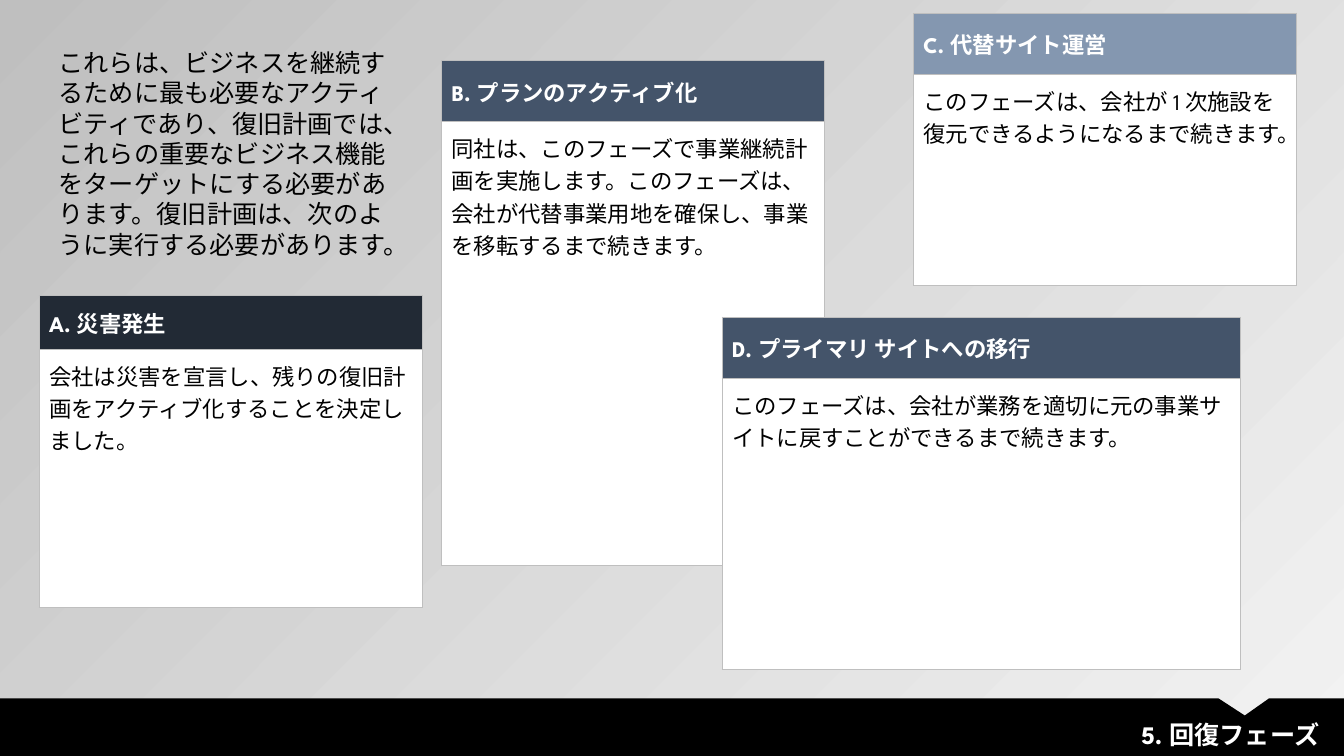
import pptx
import pptx.dml.color
import pptx.enum.lang
import pptx.enum.text
import pptx.oxml
import pptx.oxml.ns
import pptx.util
from pptx.util import Cm

COLORS = {
    "black": "000000", "white": "FFFFFF", "border": "BFBFBF", "light": "F2F2F2",
    "navy": "222A35", "slate": "44546A", "steel": "8497B0",
}
FONT = "League Spartan"
ANCHOR = pptx.enum.text.MSO_ANCHOR
ALIGN = pptx.enum.text.PP_ALIGN


def rgb(name):
    return pptx.dml.color.RGBColor.from_string(COLORS[name])


def write(tf, text, size=16, color="black", bold=False, align=ALIGN.LEFT,
          anchor=ANCHOR.TOP, east_asian=False):
    tf.word_wrap = True
    tf.vertical_anchor = anchor
    p = tf.paragraphs[0]
    p.alignment = align
    p.line_spacing = 1.0
    p.space_before = pptx.util.Pt(0)
    r = p.add_run()
    r.text = text
    r.font.name = FONT
    r.font.size = pptx.util.Pt(size)
    r.font.bold = bold
    r.font.color.rgb = rgb(color)
    r.font.language_id = pptx.enum.lang.MSO_LANGUAGE_ID.JAPANESE
    if east_asian:
        ea = pptx.oxml.parse_xml(f'<a:ea {pptx.oxml.ns.nsdecls("a")} typeface="{FONT}"/>')
        r.font._element.append(ea)


prs = pptx.Presentation()
prs.slide_width, prs.slide_height = Cm(33.87), Cm(19.05)
s = prs.slides.add_slide(prs.slide_layouts[1])

# Background gradient, light at the lower right
fill = s.background.fill
fill.gradient()
fill.gradient_angle = 135
for stop, position, color in zip(fill.gradient_stops, (0, 1), ("light", "border")):
    stop.position = position
    stop.color.rgb = rgb(color)

# Black footer band with a notch, behind everything else
band = [(30.71, 17.6), (31.37, 18.03), (31.98, 17.6), (33.87, 17.6), (33.87, 19.05), (0, 19.05)]
builder = s.shapes.build_freeform(Cm(0), Cm(17.6))
builder.add_line_segments([(Cm(x), Cm(y)) for x, y in band], close=True)
sp = builder.convert_to_shape()
sp.shadow.inherit = False
sp.fill.solid()
sp.fill.fore_color.rgb = rgb("black")
sp.line.fill.background()
s.shapes._spTree.insert(2, sp._element)

# Title in the footer
title = s.shapes.title
title.left, title.top, title.width, title.height = Cm(0.61), Cm(17.99), Cm(32.89), Cm(1.8)
write(title.text_frame, "5. 回復フェーズ", size=18, color="white", bold=True,
      align=ALIGN.RIGHT, east_asian=True)

# Introduction
intro = s.placeholders[1]
intro.left, intro.top, intro.width, intro.height = Cm(1.22), Cm(1.07), Cm(9.22), Cm(5.64)
write(intro.text_frame,
      "これらは、ビジネスを継続するために最も必要なアクティビティであり、復旧計画では、"
      "これらの重要なビジネス機能をターゲットにする必要があります。"
      "復旧計画は、次のように実行する必要があります。", size=18, east_asian=True)
pPr = intro.text_frame.paragraphs[0]._p.get_or_add_pPr()
pPr.set("marL", "0")
pPr.set("indent", "0")
pPr.append(pptx.oxml.parse_xml(f'<a:buNone {pptx.oxml.ns.nsdecls("a")}/>'))

# Phase cards: left, top, width, row heights, header colour, heading, body
cards = [
    (23.02, 0.33, 9.65, (1.54, 5.33), "steel", "C. 代替サイト運営",
     "このフェーズは、会社が 1 次施設を復元できるようになるまで続きます。"),
    (11.13, 1.53, 9.65, (1.54, 11.18), "slate", "B. プランのアクティブ化",
     "同社は、このフェーズで事業継続計画を実施します。このフェーズは、"
     "会社が代替事業用地を確保し、事業を移転するまで続きます。"),
    (18.2, 8, 13.06, (1.54, 7.33), "slate", "D. プライマリ サイトへの移行",
     "このフェーズは、会社が業務を適切に元の事業サイトに戻すことができるまで続きます。"),
    (0.99, 7.45, 9.65, (1.35, 6.5), "navy", "A. 災害発生",
     "会社は災害を宣言し、残りの復旧計画をアクティブ化することを決定しました。"),
]
for left, top, width, heights, header, heading, body in cards:
    table = s.shapes.add_table(2, 1, Cm(left), Cm(top), Cm(width), Cm(sum(heights))).table
    rows = [(heading, header, "white", True, ANCHOR.MIDDLE),
            (body, "white", "black", False, ANCHOR.TOP)]
    for i, (text, back, color, bold, anchor) in enumerate(rows):
        table.rows[i].height = Cm(heights[i])
        cell = table.cell(i, 0)
        cell.margin_left = cell.margin_right = Cm(0.25)
        cell.margin_top = cell.margin_bottom = Cm(0.25)
        cell.vertical_anchor = anchor
        for side in "LRTB":
            cell._tc.get_or_add_tcPr().append(pptx.oxml.parse_xml(
                f'<a:ln{side} {pptx.oxml.ns.nsdecls("a")} w="12700"><a:solidFill>'
                f'<a:srgbClr val="{COLORS["border"]}"/></a:solidFill></a:ln{side}>'))
        cell.fill.solid()
        cell.fill.fore_color.rgb = rgb(back)
        write(cell.text_frame, text, color=color, bold=bold, anchor=anchor)

prs.save("out.pptx")
